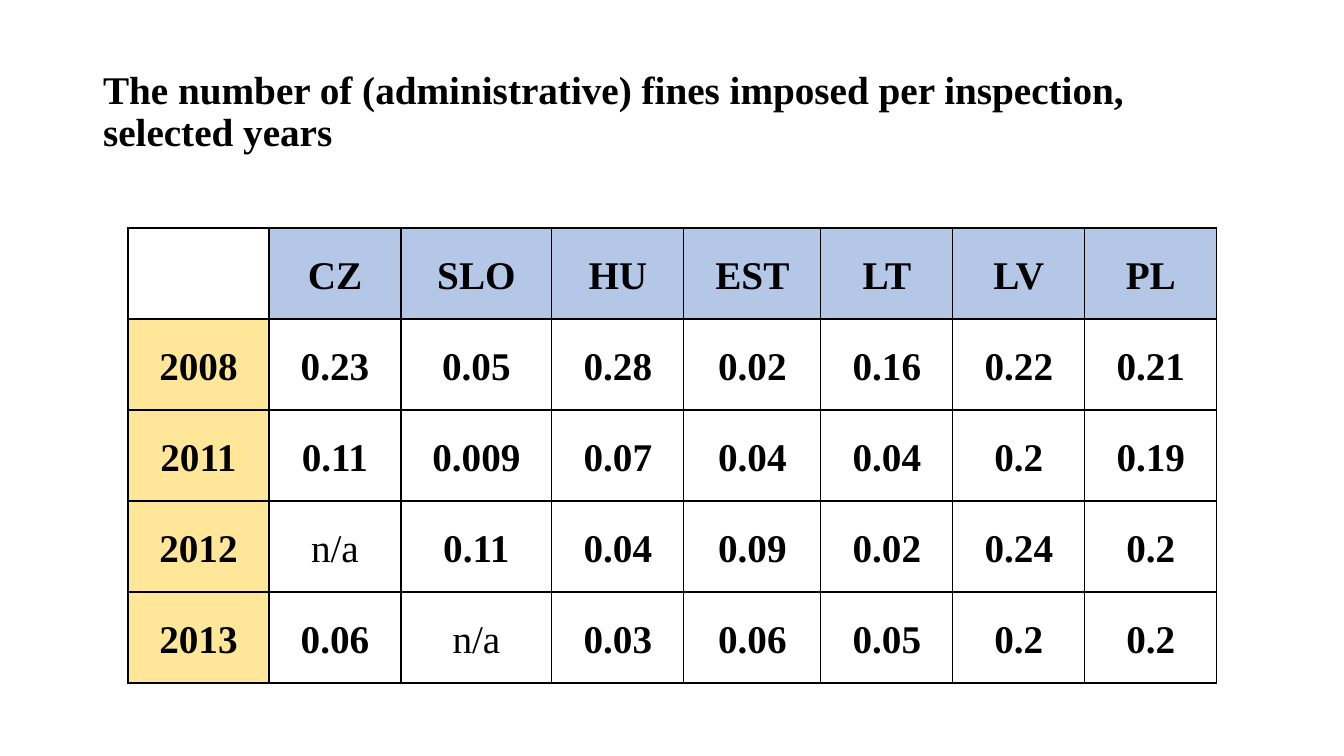
from pptx import Presentation
from pptx import util as u
from pptx.dml.color import RGBColor
from pptx.enum import text
from pptx.oxml import parse_xml
from pptx.oxml.ns import nsdecls

PX = 914400 / 100.8
COLORS = {"ink": "000000", "country": "B4C7E7", "year": "FFE699"}
FONT = {"name": "Times New Roman", "size": u.Pt(28)}

TITLE = "The number of (administrative) fines imposed per inspection, selected years"
COL_WIDTHS = [141, 132, 151, 132, 137, 132, 132, 132]
ROW_HEIGHT = 91
FINES = [
    ["", "CZ", "SLO", "HU", "EST", "LT", "LV", "PL"],
    ["2008", "0.23", "0.05", "0.28", "0.02", "0.16", "0.22", "0.21"],
    ["2011", "0.11", "0.009", "0.07", "0.04", "0.04", "0.2", "0.19"],
    ["2012", "n/a", "0.11", "0.04", "0.09", "0.02", "0.24", "0.2"],
    ["2013", "0.06", "n/a", "0.03", "0.06", "0.05", "0.2", "0.2"],
]
CELL_FORMAT = {
    "margin_left": 17,
    "margin_top": 2,
    "margin_right": 17,
    "margin_bottom": 0,
}


def px(n):
    return u.Emu(round(n * PX))


def rgb(name):
    return RGBColor.from_string(COLORS[name])


def set_attrs(obj, values):
    for name, value in values.items():
        setattr(obj, name, value)


def write(tf, content, align, spacing, bold=True):
    p = tf.paragraphs[0]
    set_attrs(p, {"alignment": align, "line_spacing": spacing})
    r = p.add_run()
    r.text = content
    set_attrs(r.font, {**FONT, "bold": bold})
    r.font.color.rgb = rgb("ink")


def add_title(slide):
    sp = slide.shapes.title
    box = {"left": 93, "top": 40, "width": 1159, "height": 146}
    set_attrs(sp, {name: px(n) for name, n in box.items()})
    tf = sp.text_frame
    set_attrs(tf, {
        "word_wrap": True,
        "auto_size": text.MSO_AUTO_SIZE.NONE,
        "vertical_anchor": text.MSO_ANCHOR.MIDDLE,
    })
    write(tf, TITLE, text.PP_ALIGN.LEFT, 0.9)


def add_borders(cell):
    """Draw a one-point line on all four sides, ahead of the cell's fill."""
    tc_pr = cell._tc.get_or_add_tcPr()
    for i, side in enumerate(("lnL", "lnR", "lnT", "lnB")):
        tc_pr.insert(i, parse_xml(
            f'<a:{side} {nsdecls("a")} w="{u.Pt(1)}"><a:solidFill>'
            f'<a:srgbClr val="{COLORS["ink"]}"/></a:solidFill></a:{side}>'))


def fill_cell(cell, color):
    if color:
        cell.fill.solid()
        cell.fill.fore_color.rgb = rgb(color)
    else:
        cell.fill.background()


def add_fines_table(slide):
    frame = slide.shapes.add_table(
        len(FINES), len(COL_WIDTHS), px(128), px(228),
        px(sum(COL_WIDTHS)), px(ROW_HEIGHT * len(FINES)))
    table = frame.table
    set_attrs(table, {"first_row": False, "horz_banding": False})
    for column, width in zip(table.columns, COL_WIDTHS):
        column.width = px(width)
    for i, values in enumerate(FINES):
        table.rows[i].height = px(ROW_HEIGHT)
        for j, value in enumerate(values):
            cell = table.cell(i, j)
            set_attrs(cell, {name: px(n) for name, n in CELL_FORMAT.items()})
            cell.vertical_anchor = text.MSO_ANCHOR.MIDDLE
            color = None
            if value and i == 0:
                color = "country"
            elif value and j == 0:
                color = "year"
            fill_cell(cell, color)
            add_borders(cell)
            if value:
                write(cell.text_frame, value, text.PP_ALIGN.CENTER, 1.07,
                      bold=value != "n/a")


def main():
    prs = Presentation()
    set_attrs(prs, {"slide_width": px(1344), "slide_height": px(756)})
    slide = prs.slides.add_slide(prs.slide_layouts[5])
    add_title(slide)
    add_fines_table(slide)
    prs.save("out.pptx")


if __name__ == "__main__":
    main()
